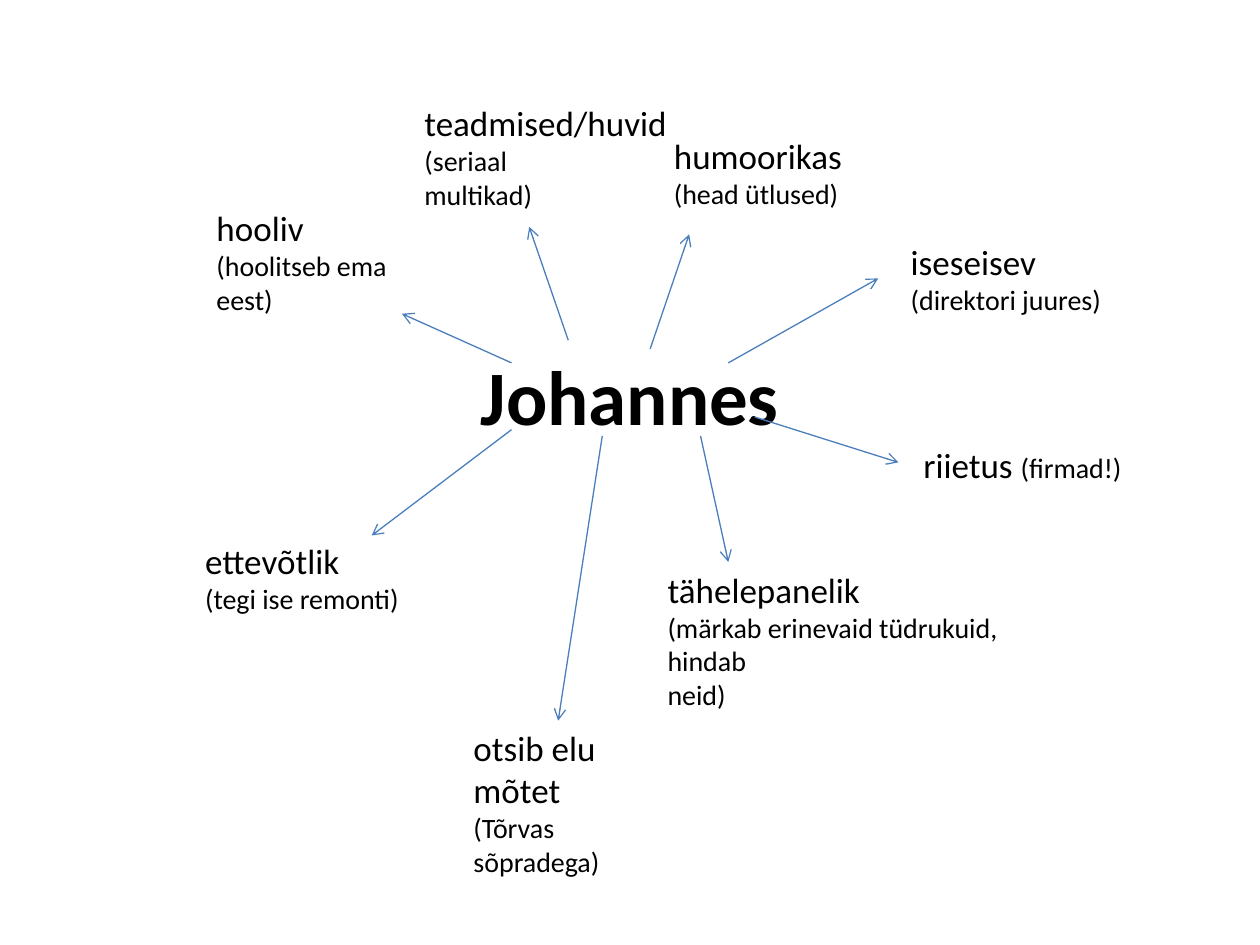
"""Build a mind map slide of the traits of Johannes."""
import pptx
import pptx.dml.color
import pptx.enum.shapes
import pptx.enum.text
import pptx.oxml
import pptx.oxml.ns
import pptx.util

Inches = pptx.util.Inches
Pt = pptx.util.Pt

TITLE = "Johannes"
TITLE_BOX = (0.75, 2.33, 8.5, 1.61)
FONT, BLACK, BLUE = "Calibri", "000000", "4B7EBC"
TRAIT_SIZE, DETAIL_SIZE, TITLE_SIZE = 20, 16, 44

TRAITS = [
    {"box": (7.23, 3.47, 2.6, 0.44), "wrap": True, "inline": True,
     "trait": "riietus ", "details": ["(firmad!)"],
     "arrow": ((5.99, 3.31), (7.13, 3.67))},
    {"box": (5.2, 4.46, 3.03, 1.25), "wrap": True, "inline": False,
     "trait": "tähelepanelik", "details": ["(märkab erinevaid tüdrukuid, hindab", "neid)"],
     "arrow": ((5.56, 3.46), (5.78, 4.46))},
    {"box": (3.66, 5.72, 1.53, 1.31), "wrap": True, "inline": True,
     "trait": "otsib elu mõtet ", "details": ["(Tõrvas sõpradega)"],
     "arrow": ((4.78, 3.46), (4.43, 5.72))},
    {"box": (1.53, 4.23, 2.27, 0.71), "wrap": True, "inline": False,
     "trait": "ettevõtlik", "details": ["(tegi ise remonti)"],
     "arrow": ((4.06, 3.41), (2.95, 4.25))},
    {"box": (1.62, 1.59, 1.57, 0.98), "wrap": False, "inline": False,
     "trait": "hooliv", "details": ["(hoolitseb ema", "eest)"],
     "arrow": ((4.06, 2.88), (3.19, 2.49))},
    {"box": (3.27, 0.76, 2.15, 0.98), "wrap": False, "inline": False,
     "trait": "teadmised/huvid", "details": ["(seriaal", "multikad)"],
     "arrow": ((4.51, 2.7), (4.2, 1.8))},
    {"box": (5.25, 1.02, 1.55, 0.71), "wrap": False, "inline": False,
     "trait": "humoorikas", "details": ["(head ütlused)"],
     "arrow": ((5.16, 2.77), (5.47, 1.86))},
    {"box": (7.13, 1.86, 1.73, 0.71), "wrap": False, "inline": False,
     "trait": "iseseisev", "details": ["(direktori juures)"],
     "arrow": ((5.78, 2.88), (6.97, 2.21))},
]


def color(value):
    return pptx.dml.color.RGBColor.from_string(value)


def add_text(paragraph, text, size=DETAIL_SIZE, bold=False):
    run = paragraph.add_run()
    run.text = text
    run.font.name = FONT
    run.font.size = Pt(size)
    run.font.bold = bold
    run.font.color.rgb = color(BLACK)


def set_title(slide):
    title = slide.shapes.title
    title.left, title.top, title.width, title.height = map(Inches, TITLE_BOX)
    title.text_frame.vertical_anchor = pptx.enum.text.MSO_ANCHOR.MIDDLE
    paragraph = title.text_frame.paragraphs[0]
    paragraph.alignment = pptx.enum.text.PP_ALIGN.CENTER
    add_text(paragraph, TITLE, size=TITLE_SIZE, bold=True)


def append_element(parent, name, attributes=""):
    namespace = pptx.oxml.ns.nsdecls("a")
    parent.append(pptx.oxml.parse_xml(f"<a:{name} {namespace} {attributes}/>"))


def add_arrow(slide, start, end):
    arrow = slide.shapes.add_connector(
        pptx.enum.shapes.MSO_CONNECTOR.STRAIGHT, *map(Inches, start + end))
    arrow.line.color.rgb = color(BLUE)
    arrow.line.width = Pt(0.75)
    properties = arrow._element.spPr
    append_element(properties.find(pptx.oxml.ns.qn("a:ln")), "tailEnd", 'type="arrow"')
    append_element(properties, "effectLst")


def add_trait(slide, item):
    frame = slide.shapes.add_textbox(*map(Inches, item["box"])).text_frame
    frame.word_wrap = item["wrap"]
    frame.auto_size = pptx.enum.text.MSO_AUTO_SIZE.SHAPE_TO_FIT_TEXT
    paragraph = frame.paragraphs[0]
    add_text(paragraph, item["trait"], size=TRAIT_SIZE)
    for detail in item["details"]:
        add_text(paragraph if item["inline"] else frame.add_paragraph(), detail)


def main():
    presentation = pptx.Presentation()
    presentation.slide_width, presentation.slide_height = Inches(10), Inches(7.5)
    slide = presentation.slides.add_slide(presentation.slide_layouts[5])
    set_title(slide)
    for item in TRAITS:
        add_arrow(slide, *item["arrow"])
    for item in TRAITS:
        add_trait(slide, item)
    presentation.save("out.pptx")


if __name__ == "__main__":
    main()
